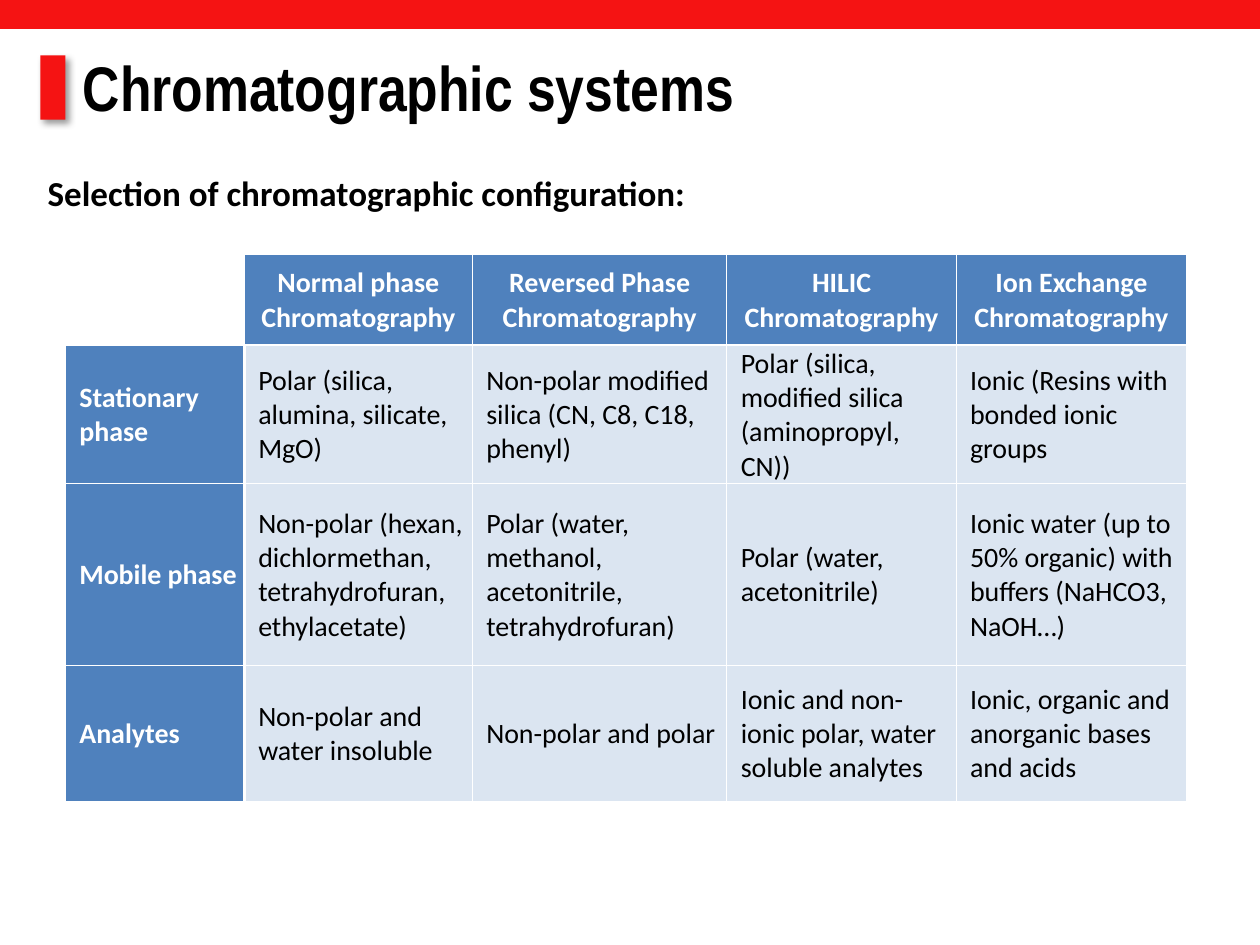
import lxml.etree
import pptx
import pptx.dml.color
import pptx.enum.shapes
import pptx.enum.text
import pptx.oxml
import pptx.oxml.ns
import pptx.util

Inches = pptx.util.Inches
RGBColor = pptx.dml.color.RGBColor
MIDDLE = pptx.enum.text.MSO_ANCHOR.MIDDLE
TOP = pptx.enum.text.MSO_ANCHOR.TOP
CENTER = pptx.enum.text.PP_ALIGN.CENTER
LEFT = pptx.enum.text.PP_ALIGN.LEFT

RED = RGBColor(0xF5, 0x13, 0x13)
BLUE = RGBColor(0x4F, 0x81, 0xBD)
PALE_BLUE = RGBColor(0xDB, 0xE5, 0xF1)
BLACK = RGBColor(0, 0, 0)
WHITE = RGBColor(0xFF, 0xFF, 0xFF)

COLUMN_WIDTHS = [1.42, 1.81, 2.02, 1.82, 1.83]
ROW_HEIGHTS = [0.72, 1.1, 1.44, 1.08]
ROWS = [
    ["", "Normal phase Chromatography", "Reversed Phase Chromatography",
     "HILIC Chromatography", "Ion Exchange Chromatography"],
    ["Stationary phase", "Polar (silica, alumina, silicate, MgO)",
     "Non-polar modified silica (CN, C8, C18, phenyl)",
     "Polar (silica, modified silica (aminopropyl, CN))",
     "Ionic (Resins with bonded ionic groups"],
    ["Mobile phase",
     "Non-polar (hexan, dichlormethan, tetrahydrofuran, ethylacetate)",
     "Polar (water, methanol, acetonitrile, tetrahydrofuran)",
     "Polar (water, acetonitrile)",
     "Ionic water (up to 50% organic) with buffers (NaHCO3, NaOH…)"],
    ["Analytes", "Non-polar and water insoluble", "Non-polar and polar",
     "Ionic and non-ionic polar, water soluble analytes",
     "Ionic, organic and anorganic bases and acids"],
]


def write_text(frame, text, size=16, font="Calibri", color=BLACK, bold=True,
               align=LEFT, indent=0):
    para = frame.paragraphs[0]
    para.alignment = align
    if indent:
        properties = para._p.get_or_add_pPr()
        properties.set("marL", str(Inches(indent)))
        properties.set("indent", "0")
    span = para.add_run()
    span.text = text
    span.font.size = pptx.util.Pt(size)
    span.font.name = font
    span.font.color.rgb = color
    span.font.bold = bold


def set_borders(cell, widths):
    """Give the cell white borders; widths maps L, R, T, B to points."""
    properties = cell._tc.get_or_add_tcPr()
    for position, side in enumerate(s for s in "LRTB" if s in widths):
        properties.insert(position, pptx.oxml.parse_xml(
            f'<a:ln{side} {pptx.oxml.ns.nsdecls("a")} w="{pptx.util.Pt(widths[side])}">'
            f'<a:solidFill><a:srgbClr val="{WHITE}"/></a:solidFill></a:ln{side}>'))


deck = pptx.Presentation()
deck.slide_width = Inches(10)
deck.slide_height = Inches(7.5)
page = deck.slides.add_slide(deck.slide_layouts[6])

# Red title marker and top band
bars = []
for left, top, width, height in [(0.32, 0.44, 0.2, 0.51), (0, 0, 10, 0.23)]:
    bar = page.shapes.add_shape(
        pptx.enum.shapes.MSO_SHAPE.RECTANGLE,
        Inches(left), Inches(top), Inches(width), Inches(height))
    bar.shadow.inherit = False
    bar.fill.solid()
    bar.fill.fore_color.rgb = RED
    bar.line.fill.background()
    bars.append(bar)

title_marker = bars[0]
effects = title_marker._element.spPr.find(pptx.oxml.ns.qn("a:effectLst"))
shadow = lxml.etree.SubElement(
    effects, pptx.oxml.ns.qn("a:outerShdw"), blurRad=str(pptx.util.Pt(4)),
    dist=str(pptx.util.Pt(3)), dir="2700000", algn="tl", rotWithShape="0")
shadow_color = lxml.etree.SubElement(shadow, pptx.oxml.ns.qn("a:srgbClr"), val=str(BLACK))
lxml.etree.SubElement(shadow_color, pptx.oxml.ns.qn("a:alpha"), val="40000")

# Title and subtitle
for text, left, top, width, height, size, font, anchor in [
    ("Chromatographic systems", 0.56, 0.33, 9.1, 0.71, 36, "Arial Narrow", MIDDLE),
    ("Selection of chromatographic configuration:", 0.28, 1.31, 8.9, 0.5, 20, "Calibri", TOP),
]:
    box = page.shapes.add_textbox(Inches(left), Inches(top), Inches(width), Inches(height))
    box.text_frame.word_wrap = True
    box.text_frame.vertical_anchor = anchor
    write_text(box.text_frame, text, size=size, font=font)

# Comparison table
table = page.shapes.add_table(
    len(ROWS), len(COLUMN_WIDTHS), Inches(0.52), Inches(2.02),
    Inches(sum(COLUMN_WIDTHS)), Inches(sum(ROW_HEIGHTS))).table
table.horz_banding = False
for column, width in zip(table.columns, COLUMN_WIDTHS):
    column.width = Inches(width)
for row, height in zip(table.rows, ROW_HEIGHTS):
    row.height = Inches(height)

last_row, last_column = len(ROWS) - 1, len(COLUMN_WIDTHS) - 1
for r, texts in enumerate(ROWS):
    for c, text in enumerate(texts):
        cell = table.cell(r, c)
        is_heading = r == 0 or c == 0
        if text:
            cell.fill.solid()
            cell.fill.fore_color.rgb = BLUE if is_heading else PALE_BLUE
            cell.vertical_anchor = MIDDLE
            cell.margin_left = cell.margin_right = cell.margin_top = Inches(0.01)
            cell.margin_bottom = 0
            write_text(cell.text_frame, text, color=WHITE if is_heading else BLACK,
                       bold=is_heading, align=CENTER if r == 0 else LEFT,
                       indent=0.1 if r else 0)
        else:
            cell.fill.background()

        # Inner borders only, thicker next to the headings
        widths = {}
        if c > 0:
            widths["L"] = 1.5 if c == 1 and r else 0.75
        if c < last_column:
            widths["R"] = 1.5 if c == 0 and r else 0.75
        if r > 0:
            widths["T"] = 1.5 if r == 1 else 0.75
        if r < last_row:
            widths["B"] = 1.5 if r == 0 else 0.75
        set_borders(cell, widths)

deck.save("out.pptx")
